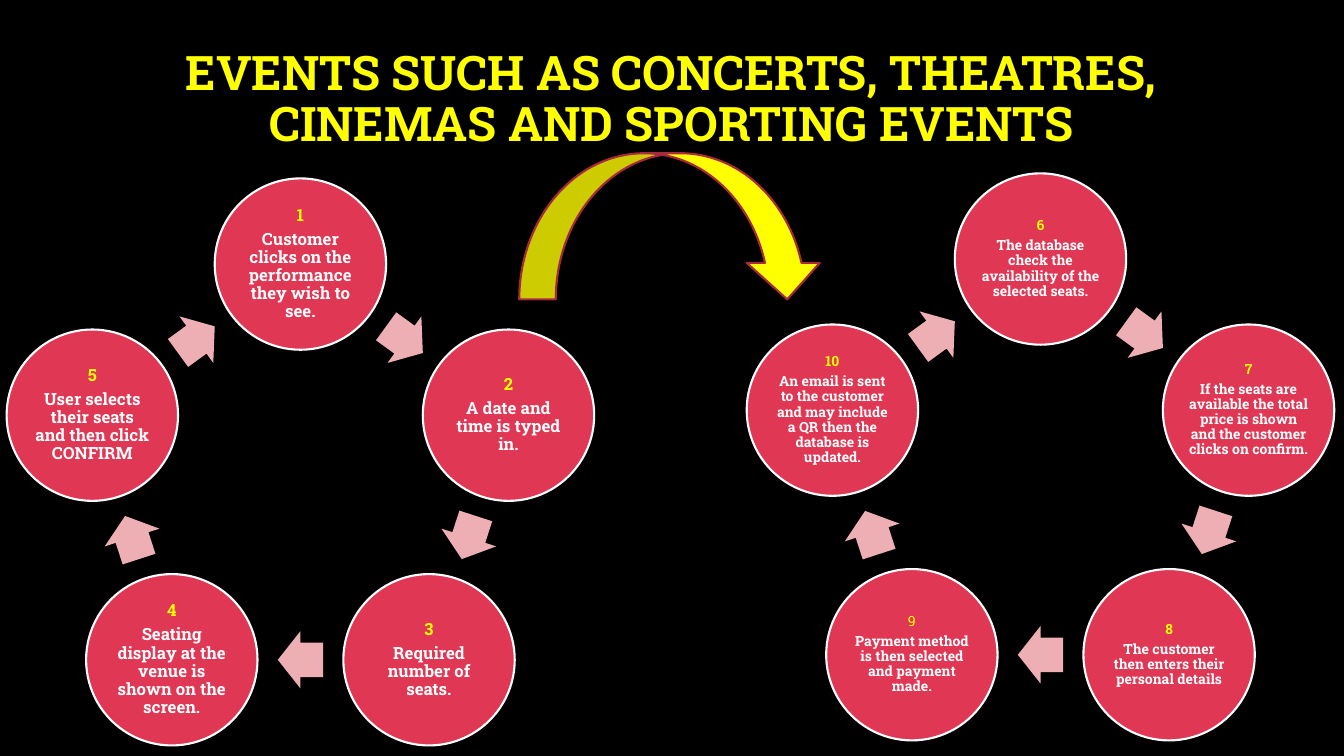
from dataclasses import dataclass
from math import cos, pi, radians, sin

from pptx import Presentation
from pptx.dml.color import RGBColor
from pptx.enum.shapes import MSO_SHAPE as Preset
from pptx.enum.text import MSO_ANCHOR as Anchor, PP_ALIGN as Align
from pptx.shapes.autoshape import Shape
from pptx.shapes.group import GroupShape
from pptx.slide import Slide
from pptx.text.text import TextFrame
from pptx.util import Inches, Pt

FONT = "Roboto Slab"
YELLOW, WHITE, BLACK = "FFFF00", "FFFFFF", "000000"
RED, PINK, DARK_RED = "E03754", "EDAEB4", "A6293E"
CYCLE_RADIUS = 2.17
CIRCLE_SIZE = 1.7
ARROW_WIDTH, ARROW_HEIGHT = 0.45, 0.57


@dataclass
class Step:
    number: int
    text: str
    number_bold: bool = True


@dataclass
class Cycle:
    center_x: float
    center_y: float
    font_size: float
    inset: float
    steps: list[Step]


CYCLES = [
    Cycle(2.98, 4.79, 12, 0.02, [
        Step(1, "Customer clicks on the performance they wish to see."),
        Step(2, "A date and time is typed in."),
        Step(3, "Required number of seats."),
        Step(4, "Seating display at the venue is shown on the screen."),
        Step(5, "User selects their seats and then click CONFIRM"),
    ]),
    Cycle(10.32, 4.74, 10, 0.01, [
        Step(6, "The database check the availability of the selected seats."),
        Step(7, "If the seats are available the total price is shown and the "
                "customer clicks on confirm."),
        Step(8, "The customer then enters their personal details"),
        Step(9, "Payment method is then selected and payment made.", number_bold=False),
        Step(10, "An email is sent to the customer and may include a QR then the "
                 "database is updated."),
    ]),
]


def color(value: str) -> RGBColor:
    return RGBColor.from_string(value)


def write(frame: TextFrame, text: str, *, size: float, fill: str, bold: bool = True,
          space_after: float = 0, first: bool = False) -> None:
    paragraph = frame.paragraphs[0] if first else frame.add_paragraph()
    paragraph.alignment = Align.CENTER
    paragraph.line_spacing = 0.9
    paragraph.space_before = Pt(0)
    paragraph.space_after = Pt(space_after)
    run = paragraph.add_run()
    run.text = text
    run.font.name = FONT
    run.font.size = Pt(size)
    run.font.bold = bold
    run.font.color.rgb = color(fill)


def add_preset(parent: Slide | GroupShape, preset: Preset, left: float, top: float,
               width: float, height: float, *, fill: str, line: str | None = None,
               rotation: float = 0) -> Shape:
    shape = parent.shapes.add_shape(
        preset, Inches(left), Inches(top), Inches(width), Inches(height))
    shape.shadow.inherit = False
    shape.rotation = rotation
    shape.fill.solid()
    shape.fill.fore_color.rgb = color(fill)
    if line:
        shape.line.color.rgb = color(line)
        shape.line.width = Pt(1.5)
    else:
        shape.line.fill.background()
    return shape


def set_frame(frame: TextFrame, inset: float) -> None:
    frame.word_wrap = True
    frame.vertical_anchor = Anchor.MIDDLE
    frame.margin_left = frame.margin_right = Inches(inset)
    frame.margin_top = frame.margin_bottom = Inches(inset)


def around(cycle: Cycle, angle: float, radius: float) -> tuple[float, float]:
    return (cycle.center_x + radius * sin(radians(angle)),
            cycle.center_y - radius * cos(radians(angle)))


def draw_cycle(slide: Slide, cycle: Cycle) -> None:
    group = slide.shapes.add_group_shape()
    count = len(cycle.steps)
    turn = 360 / count
    for index, step in enumerate(cycle.steps):
        x, y = around(cycle, index * turn, CYCLE_RADIUS)
        circle = add_preset(group, Preset.OVAL, x - CIRCLE_SIZE / 2, y - CIRCLE_SIZE / 2,
                            CIRCLE_SIZE, CIRCLE_SIZE, fill=RED, line=WHITE)
        frame = circle.text_frame
        set_frame(frame, cycle.inset)
        size, gap = cycle.font_size, cycle.font_size * 0.35
        write(frame, str(step.number), size=size, fill=YELLOW, bold=step.number_bold,
              space_after=gap, first=True)
        write(frame, step.text, size=size, fill=WHITE, space_after=gap)

        angle = (index + 0.5) * turn
        x, y = around(cycle, angle, CYCLE_RADIUS * cos(pi / count))
        arrow = add_preset(group, Preset.RIGHT_ARROW, x - ARROW_WIDTH / 2,
                           y - ARROW_HEIGHT / 2, ARROW_WIDTH, ARROW_HEIGHT,
                           fill=PINK, rotation=angle)
        arrow.adjustments[0] = 0.6
        arrow.adjustments[1] = 0.5


def draw_title(slide: Slide) -> None:
    title = slide.shapes.title
    title.left, title.top = Inches(1), Inches(0.27)
    title.width, title.height = Inches(11.32), Inches(1.45)
    title.text_frame.word_wrap = True
    title.text_frame.vertical_anchor = Anchor.MIDDLE
    write(title.text_frame, "EVENTS SUCH AS CONCERTS, THEATRES, CINEMAS AND SPORTING EVENTS",
          size=34, fill=YELLOW, first=True)


def main() -> None:
    presentation = Presentation()
    presentation.slide_width = Inches(13.33)
    presentation.slide_height = Inches(7.5)
    slide = presentation.slides.add_slide(presentation.slide_layouts.get_by_name("Title Only"))
    slide.background.fill.solid()
    slide.background.fill.fore_color.rgb = color(BLACK)
    draw_title(slide)
    for cycle in CYCLES:
        draw_cycle(slide, cycle)
    add_preset(slide, Preset.CURVED_DOWN_ARROW, 5.15, 1.52, 3.02, 1.45,
               fill=YELLOW, line=DARK_RED)
    presentation.save("out.pptx")


if __name__ == "__main__":
    main()
